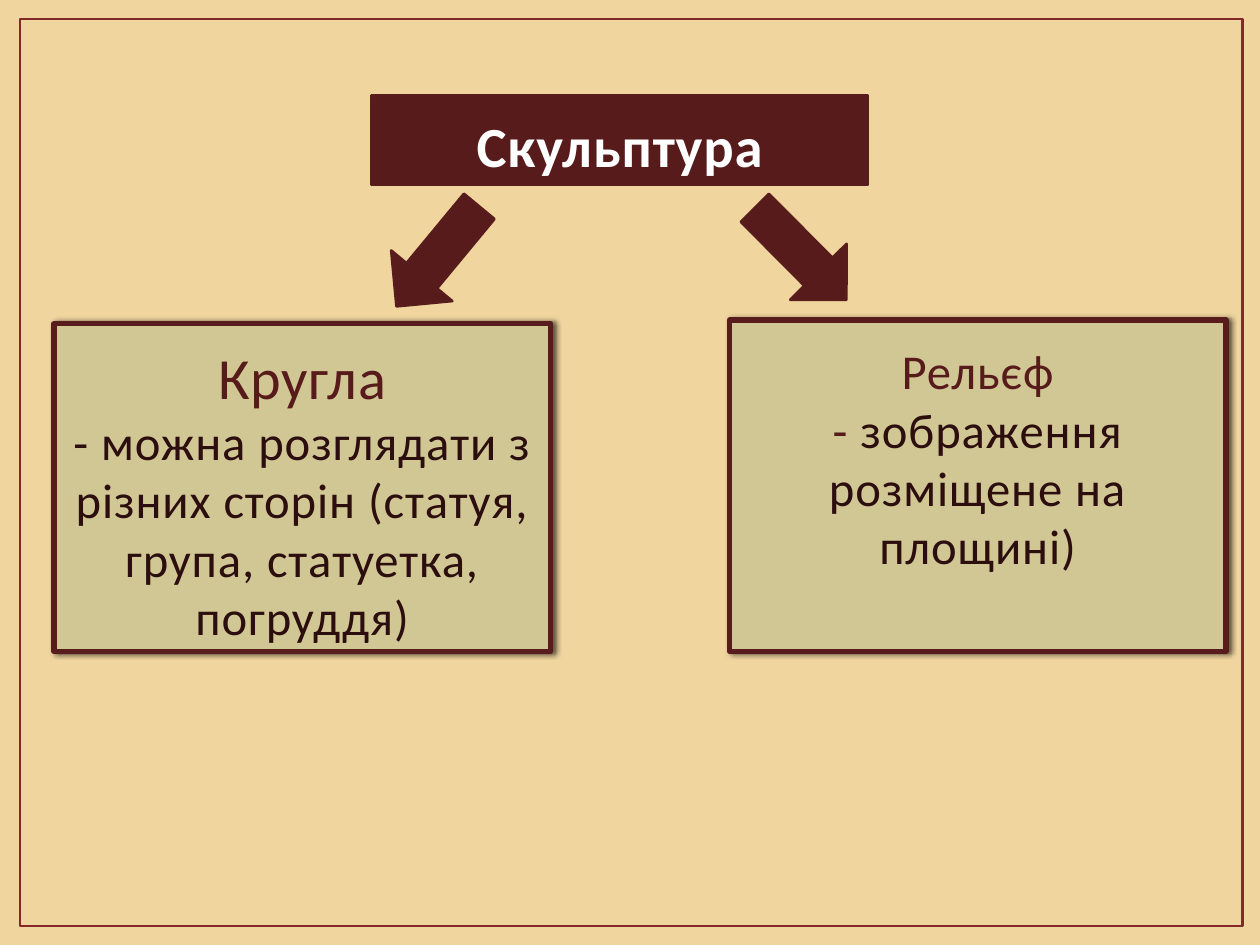
from lxml import etree
from pptx import Presentation
from pptx.dml.color import RGBColor
from pptx.enum.shapes import MSO_SHAPE
from pptx.enum.text import MSO_ANCHOR, PP_ALIGN
from pptx.oxml.ns import qn
from pptx.util import Inches, Pt

RECTANGLE = MSO_SHAPE.RECTANGLE
DOWN_ARROW = MSO_SHAPE.DOWN_ARROW
BOTTOM = MSO_ANCHOR.BOTTOM
CENTER = PP_ALIGN.CENTER

BACKGROUND = "F0D59F"
FRAME_RED = "83292A"
MAROON = "571B1C"
BORDER = "581C1C"
DARK = "2C0E0E"
KHAKI = "D1C794"
WHITE = "FFFFFF"


def color(value):
    return RGBColor.from_string(value)


def add_block(slide, kind, box, fill, line, width):
    shape = slide.shapes.add_shape(kind, *(Inches(length) for length in box))
    shape.shadow.inherit = False
    if fill:
        shape.fill.solid()
        shape.fill.fore_color.rgb = color(fill)
    else:
        shape.fill.background()
    shape.line.color.rgb = color(line)
    shape.line.width = Pt(width)
    return shape


def add_shadow(shape):
    effects = shape._element.spPr.find(qn("a:effectLst"))
    shadow = etree.SubElement(
        effects, qn("a:outerShdw"), blurRad=str(Pt(3)), dist=str(Pt(1.5)), dir="0"
    )
    black = etree.SubElement(shadow, qn("a:srgbClr"), val="000000")
    etree.SubElement(black, qn("a:alpha"), val="60000")


def write_lines(shape, lines, bold=False, bottom_inset=0.05):
    text_frame = shape.text_frame
    text_frame.word_wrap = True
    text_frame.vertical_anchor = BOTTOM
    text_frame.margin_bottom = Inches(bottom_inset)
    for index, runs in enumerate(lines):
        paragraph = text_frame.paragraphs[0] if index == 0 else text_frame.add_paragraph()
        paragraph.alignment = CENTER
        for text, size, text_color in runs:
            run = paragraph.add_run()
            run.text = text
            run.font.name = "Calibri"
            run.font.size = Pt(size)
            run.font.bold = bold
            run.font.color.rgb = color(text_color)
            run._r.get_or_add_rPr().set("spc", "50")


def add_title(slide, box, text):
    title = add_block(slide, RECTANGLE, box, MAROON, BORDER, 1.5)
    write_lines(title, [[(text, 32.4, WHITE)]], bold=True)


def add_card(slide, box, lines, bottom_inset):
    card = add_block(slide, RECTANGLE, box, KHAKI, BORDER, 3)
    add_shadow(card)
    write_lines(card, lines, bottom_inset=bottom_inset)


def add_arrow(slide, box, rotation):
    arrow = add_block(slide, DOWN_ARROW, box, MAROON, BORDER, 1.5)
    arrow.rotation = rotation


def main():
    presentation = Presentation()
    presentation.slide_width = Inches(10)
    presentation.slide_height = Inches(7.5)
    slide = presentation.slides.add_slide(presentation.slide_layouts[6])
    slide.background.fill.solid()
    slide.background.fill.fore_color.rgb = color(BACKGROUND)

    add_block(slide, RECTANGLE, (0.16, 0.15, 9.7, 7.2), None, FRAME_RED, 1.5)
    add_title(slide, (2.95, 0.76, 3.94, 0.71), "Скульптура")

    round_lines = [
        [("Кругла", 33.3, MAROON)],
        [("- можна розглядати з різних сторін (статуя, група, статуетка, погруддя)", 27.8, DARK)],
    ]
    relief_lines = [
        [("Рельєф", 27.8, MAROON)],
        [("- ", 27.8, MAROON), ("зображення розміщене на площині)", 27.8, DARK)],
    ]
    add_card(slide, (0.43, 2.57, 3.94, 2.6), round_lines, 0.05)
    add_card(slide, (5.79, 2.54, 3.94, 2.63), relief_lines, 0.61)

    add_arrow(slide, (3.16, 1.52, 0.63, 1.03), 39.6)
    add_arrow(slide, (6.04, 1.5, 0.63, 1.03), 315.2)

    presentation.save("out.pptx")


if __name__ == "__main__":
    main()
